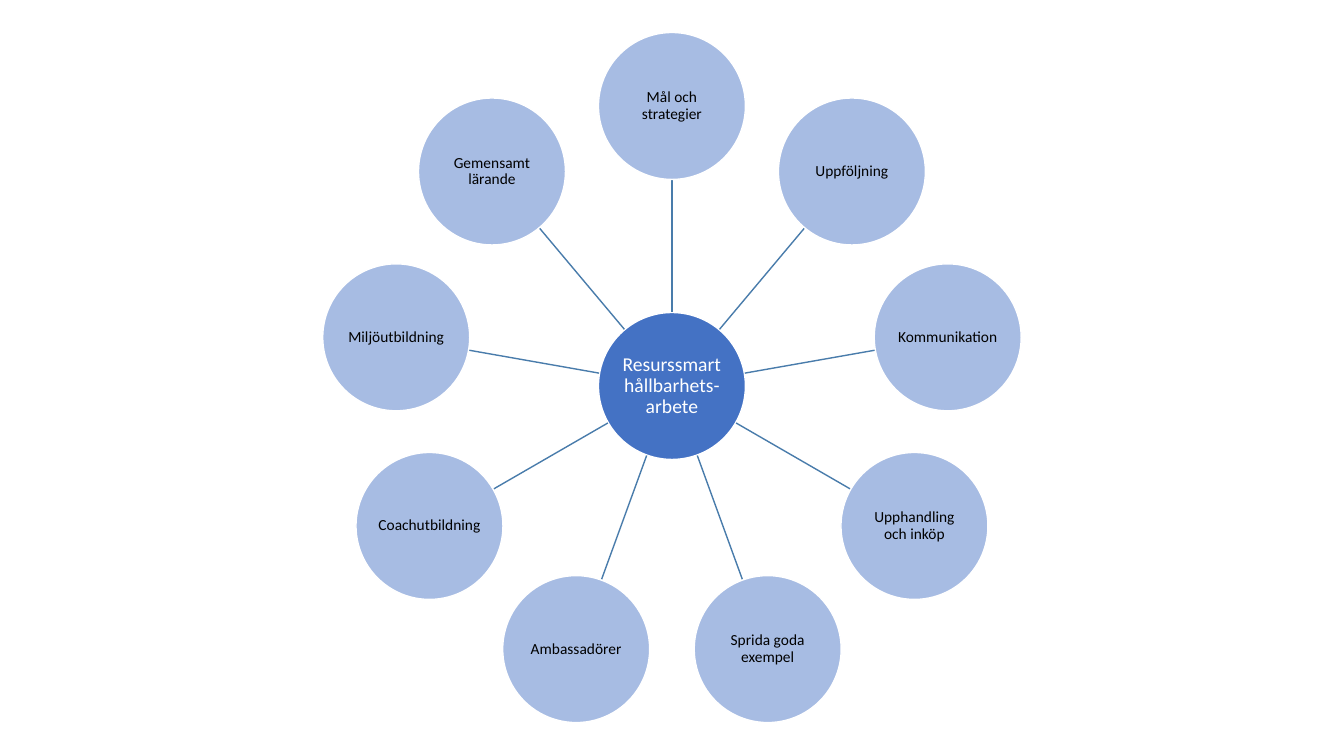
from math import cos, radians, sin

from lxml import etree
from pptx import Presentation
from pptx.dml.color import RGBColor
from pptx.enum.shapes import MSO_CONNECTOR, MSO_SHAPE
from pptx.enum.text import MSO_ANCHOR, PP_ALIGN
from pptx.oxml.ns import qn
from pptx.util import Emu, Pt

ELLIPSE = MSO_SHAPE.OVAL
STRAIGHT = MSO_CONNECTOR.STRAIGHT
MIDDLE = MSO_ANCHOR.MIDDLE
CENTER = PP_ALIGN.CENTER

BLANK_LAYOUT = 6
EMU_PER_PX = 914400 / 100.8
SLIDE_WIDTH, SLIDE_HEIGHT = 1344, 756
HUB_X, HUB_Y = 672, 386
DIAMETER = 147
ORBIT = 280
SPOKE_START, SPOKE_END = 74, 206

COLORS = {
    "hub": "4472C4",
    "topic": "A7BCE3",
    "spoke": "497CAB",
    "white": "FFFFFF",
    "black": "000000",
}

HUB_TEXT = "Resurssmart hållbarhets-arbete"
# Clockwise from the top
TOPICS = [
    "Mål och strategier",
    "Uppföljning",
    "Kommunikation",
    "Upphandling och inköp",
    "Sprida goda exempel",
    "Ambassadörer",
    "Coachutbildning",
    "Miljöutbildning",
    "Gemensamt lärande",
]


def px(length):
    return Emu(round(length * EMU_PER_PX))


def color(name):
    return RGBColor.from_string(COLORS[name])


def polar(angle, distance):
    """Point at a clockwise angle from the top of the hub."""
    return (HUB_X + distance * sin(radians(angle)),
            HUB_Y - distance * cos(radians(angle)))


def add_circle(slide, center, text, fill, text_color, size):
    x, y = center
    circle = slide.shapes.add_shape(
        ELLIPSE, px(x - DIAMETER / 2), px(y - DIAMETER / 2),
        px(DIAMETER), px(DIAMETER))
    circle.shadow.inherit = False
    circle.fill.solid()
    circle.fill.fore_color.rgb = color(fill)
    circle.line.color.rgb = color("white")
    circle.line.width = Pt(1)

    frame = circle.text_frame
    frame.word_wrap = True
    frame.vertical_anchor = MIDDLE
    frame.margin_left = frame.margin_right = 0
    frame.margin_top = frame.margin_bottom = 0
    paragraph = frame.paragraphs[0]
    paragraph.text = text
    paragraph.alignment = CENTER
    paragraph.line_spacing = 0.9
    paragraph.font.name = "Calibri"
    paragraph.font.size = Pt(size)
    paragraph.font.color.rgb = color(text_color)


def add_spoke(slide, angle):
    points = polar(angle, SPOKE_START) + polar(angle, SPOKE_END)
    spoke = slide.shapes.add_connector(STRAIGHT, *map(px, points))
    spoke.line.color.rgb = color("spoke")
    spoke.line.width = Pt(1)
    # An empty effect list removes the theme shadow
    etree.SubElement(spoke._element.spPr, qn("a:effectLst"))


def main():
    presentation = Presentation()
    presentation.slide_width = px(SLIDE_WIDTH)
    presentation.slide_height = px(SLIDE_HEIGHT)
    slide = presentation.slides.add_slide(
        presentation.slide_layouts[BLANK_LAYOUT])

    # Hub
    add_circle(slide, (HUB_X, HUB_Y), HUB_TEXT, "hub", "white", 14)

    # Topics around the hub
    for index, topic in enumerate(TOPICS):
        angle = index * 360 / len(TOPICS)
        add_spoke(slide, angle)
        add_circle(slide, polar(angle, ORBIT), topic, "topic", "black", 11)

    presentation.save("out.pptx")


if __name__ == "__main__":
    main()
